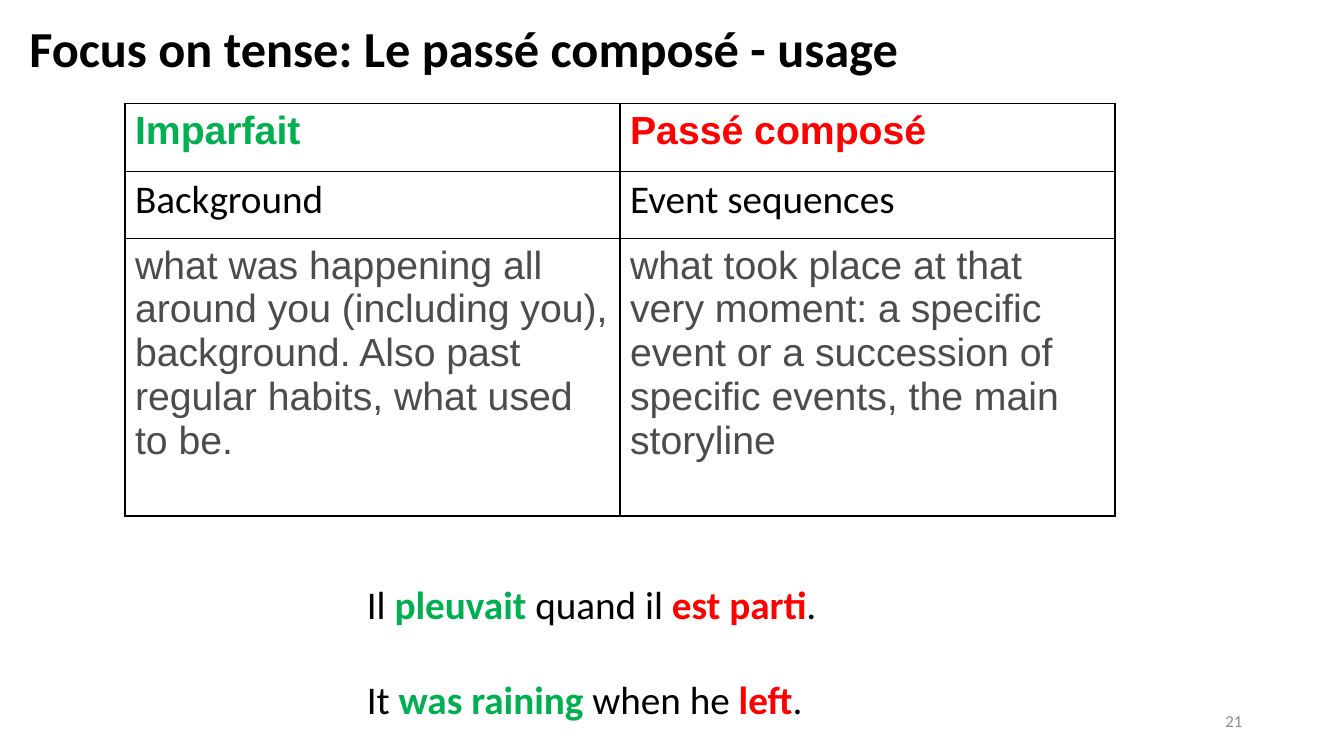
from pptx import Presentation as Deck
from pptx.dml.color import RGBColor as Rgb
from pptx.enum.text import MSO_ANCHOR as Anchor, MSO_AUTO_SIZE as Fit, PP_ALIGN as Align
from pptx.oxml import parse_xml
from pptx.oxml.ns import nsdecls
from pptx.util import Inches, Pt

HUES = {"ink": "000000", "past": "00B050", "event": "FF0000",
        "body": "4D4C4C", "page": "8C8C8C"}


class Board:
    """Holds the style and the current slide; lengths are percent of its size."""

    base = {"name": "Calibri", "size": Pt(28), "bold": False}

    def __init__(self):
        self.deck = Deck()
        self.deck.slide_width, self.deck.slide_height = Inches(13.33), Inches(7.5)
        self.slide = self.deck.slides.add_slide(self.deck.slide_layouts[5])

    def wide(self, share):
        return int(self.deck.slide_width * share / 100)

    def high(self, share):
        return int(self.deck.slide_height * share / 100)

    def area(self, left, top, width, height):
        return self.wide(left), self.high(top), self.wide(width), self.high(height)

    def words(self, para, text, hue="ink", **form):
        run = para.add_run()
        run.text = text
        for key, value in {**self.base, **form}.items():
            setattr(run.font, key, value)
        run.font.color.rgb = Rgb.from_string(HUES[hue])

    def title(self, text, area):
        shape = self.slide.shapes.title
        spots = zip(("left", "top", "width", "height"), self.area(*area))
        for key, value in spots:
            setattr(shape, key, value)
        frame = shape.text_frame
        form = {"word_wrap": True, "auto_size": Fit.NONE,
                "vertical_anchor": Anchor.MIDDLE}
        for key, value in form.items():
            setattr(frame, key, value)
        para = frame.paragraphs[0]
        para.alignment, para.line_spacing = Align.LEFT, 0.9
        self.words(para, text, size=Pt(36), bold=True)

    def text(self, lines, area, gap=0, align=Align.LEFT, **form):
        frame = self.slide.shapes.add_textbox(*self.area(*area)).text_frame
        for key, value in {"word_wrap": True, **form}.items():
            setattr(frame, key, value)
        for i, line in enumerate(lines):
            para = frame.add_paragraph() if i else frame.paragraphs[0]
            para.alignment = align
            para.space_before = Pt(gap if i else 0)
            for text, hue, font in line:
                self.words(para, text, hue, **font)

    def edge(self, cell):
        props = cell._tc.get_or_add_tcPr()
        for side in ("lnL", "lnR", "lnT", "lnB"):
            props.append(parse_xml(
                f'<a:{side} {nsdecls("a")} w="{int(Pt(1))}"><a:solidFill>'
                f'<a:srgbClr val="{HUES["ink"]}"/></a:solidFill></a:{side}>'))

    def table(self, rows, spot, width, heights):
        area = self.area(*spot, width, sum(heights))
        table = self.slide.shapes.add_table(len(rows), len(rows[0][0]), *area).table
        table.first_row = table.horz_banding = False
        for r, (texts, hues, form) in enumerate(rows):
            table.rows[r].height = self.high(heights[r])
            for c, (text, hue) in enumerate(zip(texts, hues)):
                cell = table.cell(r, c)
                self.edge(cell)
                cell.fill.background()
                self.words(cell.text_frame.paragraphs[0], text, hue, **form)


def main():
    board = Board()
    board.title("Focus on tense: Le passé composé - usage", (1.43, 3.6, 77.57, 6.27))

    # Comparison of the two tenses
    board.table([
        (("Imparfait", "Passé composé"), ("past", "event"),
         {"name": "Arial", "bold": True}),
        (("Background", "Event sequences"), ("ink", "ink"), {}),
        (("what was happening all around you (including you), background. "
          "Also past regular habits, what used to be.",
          "what took place at that very moment: a specific event or a "
          "succession of specific events, the main storyline"),
         ("body", "body"), {"name": "Arial"}),
    ], (9.3, 13.73), 73.67, (8.93, 8.93, 36.67))

    # Example sentence in both languages
    bold = {"bold": True}
    pairs = [("Il ", "pleuvait ", "quand il ", "est parti"),
             ("It ", "was raining ", "when he ", "left")]
    lines = [[(who, "ink", {}), (state, "past", bold), (link, "ink", {}),
              (event, "event", bold), (".", "ink", {})]
             for who, state, link, event in pairs]
    board.text(lines, (26.56, 76.13, 43.13, 20.13), gap=34,
               auto_size=Fit.SHAPE_TO_FIT_TEXT)

    # Page number
    board.text([[("21", "page", {"size": Pt(12)})]], (70.67, 92.67, 22.5, 5.33),
               align=Align.RIGHT, vertical_anchor=Anchor.MIDDLE)
    board.deck.save("out.pptx")


if __name__ == "__main__":
    main()
